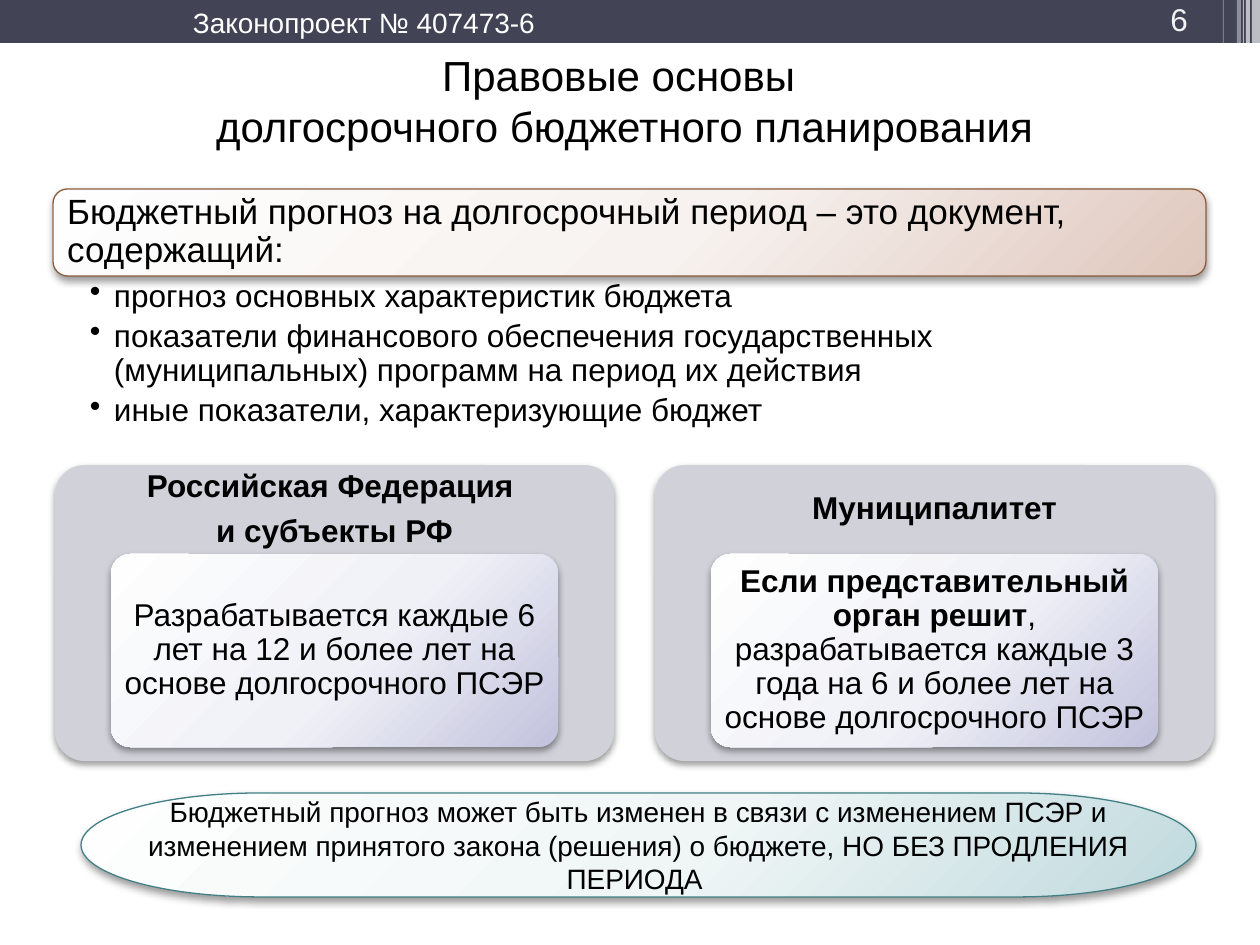
from dataclasses import dataclass

from lxml.etree import SubElement
from pptx import Presentation
from pptx.dml.color import RGBColor
from pptx.enum.shapes import MSO_SHAPE
from pptx.enum.text import MSO_ANCHOR, MSO_AUTO_SIZE, PP_ALIGN
from pptx.oxml import parse_xml
from pptx.oxml.ns import nsdecls, qn
from pptx.util import Emu, Pt

PX = 914400 // 126
SLIDE_W, SLIDE_H = 1260, 945


@dataclass(frozen=True)
class Theme:
    font: str = "Arial"
    ink: str = "000000"
    white: str = "FFFFFF"
    page_number: str = "F2F2F2"
    band: str = "424456"
    card: str = "D1D1DA"
    brown_line: str = "8B5D3D"
    teal_line: str = "438086"
    lilac: tuple = ("FEFEFE", "F0F1F7", "C2C2DD")
    brown: tuple = ("FEFEFE", "F7F2EF", "DFC7BD")
    teal: tuple = ("FEFEFE", "F0F6F6", "BFD9DD")
    title: int = 24
    lead: int = 20
    body: int = 18
    small: int = 16


THEME = Theme()

# A paragraph is a list of (text, bold) runs.
BILL = [[("Законопроект № 407473-6", False)]]
PAGE = [[("6", False)]]
TITLE = [[("Правовые основы \vдолгосрочного бюджетного планирования", False)]]
DEFINITION = [[("Бюджетный прогноз на долгосрочный период – это документ, содержащий:", False)]]
CONTENTS = [
    [("прогноз основных характеристик бюджета", False)],
    [("показатели финансового обеспечения государственных (муниципальных) "
      "программ на период их действия", False)],
    [("иные показатели, характеризующие бюджет", False)],
]
CARDS = [
    {"heading": [[("Российская Федерация ", True)], [("и субъекты РФ", True)]],
     "rule": [[("Разрабатывается каждые 6 лет на 12 и более лет на основе "
                "долгосрочного ПСЭР", False)]]},
    {"heading": [[("Муниципалитет", True)]],
     "rule": [[("Если представительный орган решит", True),
               (", разрабатывается каждые 3 года на 6 и более лет на основе "
                "долгосрочного ПСЭР", False)]]},
]
CAVEAT = [[("Бюджетный прогноз может быть изменен в связи с изменением ПСЭР и "
            "изменением принятого закона (решения) о бюджете, "
            "НО БЕЗ ПРОДЛЕНИЯ ПЕРИОДА ", False)]]

# left, width, height, opacity in percent
STRIPES = [(1252, 8, 86, 65), (1246, 4, 86, 65), (1243, 1, 86, 60),
           (1237, 4, 86, 40), (1223, 1, 81, 30)]


def px(*lengths):
    return [Emu(length * PX) for length in lengths]


def write(holder, paragraphs, *, size, color=THEME.ink, align=PP_ALIGN.LEFT,
          anchor=MSO_ANCHOR.TOP, insets=(13, 6, 13, 6), leading=None, after=0,
          bullet_indent=0, wrap=True):
    frame = holder.text_frame
    frame.auto_size = MSO_AUTO_SIZE.NONE
    frame.word_wrap = wrap
    frame.vertical_anchor = anchor
    (frame.margin_left, frame.margin_top,
     frame.margin_right, frame.margin_bottom) = px(*insets)
    for index, runs in enumerate(paragraphs):
        paragraph = frame.add_paragraph() if index else frame.paragraphs[0]
        paragraph.alignment = align
        paragraph.space_before = Pt(0)
        paragraph.space_after = Pt(after)
        if leading:
            paragraph.line_spacing = leading
        if bullet_indent:
            properties = paragraph._p.get_or_add_pPr()
            properties.set("marL", str(bullet_indent * PX))
            properties.set("indent", str(-bullet_indent * PX))
            SubElement(properties, qn("a:buChar")).set("char", "•")
        for text, bold in runs:
            for part_index, part in enumerate(text.split("\v")):
                if part_index:
                    paragraph.add_line_break()
                run = paragraph.add_run()
                run.text = part
                run.font.name = THEME.font
                run.font.size = Pt(size)
                run.font.bold = bold
                run.font.color.rgb = RGBColor.from_string(color)


def add_text(slide, box, paragraphs, **text_format):
    write(slide.shapes.add_textbox(*px(*box)), paragraphs, **text_format)


def add_panel(slide, kind, box, fill, *, line=None, corner=None, opacity=100, shadow=True):
    """Draw a shape whose fill is one colour, or three for a diagonal glow."""
    panel = slide.shapes.add_shape(kind, *px(*box))
    panel.shadow.inherit = False
    if corner is not None:
        panel.adjustments[0] = corner
    if isinstance(fill, tuple):
        stops = "".join(f'<a:gs pos="{place}000"><a:srgbClr val="{color}"/></a:gs>'
                        for place, color in zip((0, 55, 100), fill))
        panel._element.spPr.find(qn("a:prstGeom")).addnext(parse_xml(
            f'<a:gradFill {nsdecls("a")} rotWithShape="1"><a:gsLst>{stops}</a:gsLst>'
            '<a:path path="circle"><a:fillToRect l="-40000" t="-90000" '
            'r="140000" b="190000"/></a:path></a:gradFill>'))
    else:
        panel.fill.solid()
        panel.fill.fore_color.rgb = RGBColor.from_string(fill)
        if opacity < 100:
            color = panel._element.spPr.find(qn("a:solidFill"))[0]
            SubElement(color, qn("a:alpha")).set("val", str(opacity * 1000))
    if line:
        panel.line.color.rgb = RGBColor.from_string(line)
        panel.line.width = Pt(0.75)
    else:
        panel.line.fill.background()
    if shadow:
        panel._element.spPr.find(qn("a:effectLst")).append(parse_xml(
            f'<a:outerShdw {nsdecls("a")} blurRad="{Pt(4.1)}" dist="{Pt(2)}" '
            'dir="5400000" rotWithShape="0"><a:srgbClr val="000000">'
            '<a:alpha val="40000"/></a:srgbClr></a:outerShdw>'))
    return panel


def add_header(slide):
    add_panel(slide, MSO_SHAPE.RECTANGLE, (0, 0, SLIDE_W, 43), THEME.band, shadow=False)
    for left, width, height, opacity in STRIPES:
        add_panel(slide, MSO_SHAPE.RECTANGLE, (left, 0, width, height), THEME.white,
                  opacity=opacity, shadow=False)
    add_text(slide, (180, 0, 379, 47), BILL, size=THEME.small, color=THEME.white, wrap=False)
    add_text(slide, (1101, 3, 100, 41), PAGE, size=THEME.body, color=THEME.page_number,
             align=PP_ALIGN.RIGHT, anchor=MSO_ANCHOR.BOTTOM)
    title = slide.shapes.title
    title.left, title.top, title.width, title.height = px(14, 56, 1221, 88)
    write(title, TITLE, size=THEME.title, align=PP_ALIGN.CENTER, anchor=MSO_ANCHOR.MIDDLE)


def add_definition(slide):
    left, top, width, height = 53, 189, 1153, 87
    panel = add_panel(slide, MSO_SHAPE.ROUNDED_RECTANGLE, (left, top, width, height),
                      THEME.brown, line=THEME.brown_line)
    write(panel, DEFINITION, size=THEME.lead, anchor=MSO_ANCHOR.MIDDLE,
          insets=(10, 10, 10, 10), leading=0.9, after=7)
    add_text(slide, (left, top + height, width, 155), CONTENTS, size=THEME.body,
             insets=(37, 4, 17, 4), leading=0.9, after=3.6, bullet_indent=24)


def add_cards(slide):
    left, top, width, height, gap = 55, 465, 559, 296, 41
    heading_h, rule_w, rule_h = 89, 447, 193
    centred = dict(size=THEME.body, align=PP_ALIGN.CENTER, anchor=MSO_ANCHOR.MIDDLE,
                   leading=0.9, after=6.3)
    for index, card in enumerate(CARDS):
        x = left + index * (width + gap)
        add_panel(slide, MSO_SHAPE.ROUNDED_RECTANGLE, (x, top, width, height),
                  THEME.card, corner=0.1)
        add_text(slide, (x, top, width, heading_h), card["heading"],
                 insets=(9, 9, 9, 9), **centred)
        rule_box = (x + (width - rule_w) // 2, top + heading_h, rule_w, rule_h)
        rule = add_panel(slide, MSO_SHAPE.ROUNDED_RECTANGLE, rule_box, THEME.lilac, corner=0.1)
        write(rule, card["rule"], insets=(6, 5, 6, 5), **centred)


def add_caveat(slide):
    panel = add_panel(slide, MSO_SHAPE.FLOWCHART_TERMINATOR, (81, 793, 1115, 104),
                      THEME.teal, line=THEME.teal_line)
    write(panel, CAVEAT, size=THEME.small, align=PP_ALIGN.CENTER, anchor=MSO_ANCHOR.MIDDLE)


def main():
    deck = Presentation()
    deck.slide_width, deck.slide_height = px(SLIDE_W, SLIDE_H)
    slide = deck.slides.add_slide(deck.slide_layouts[5])
    add_header(slide)
    add_definition(slide)
    add_cards(slide)
    add_caveat(slide)
    deck.save("out.pptx")


if __name__ == "__main__":
    main()
